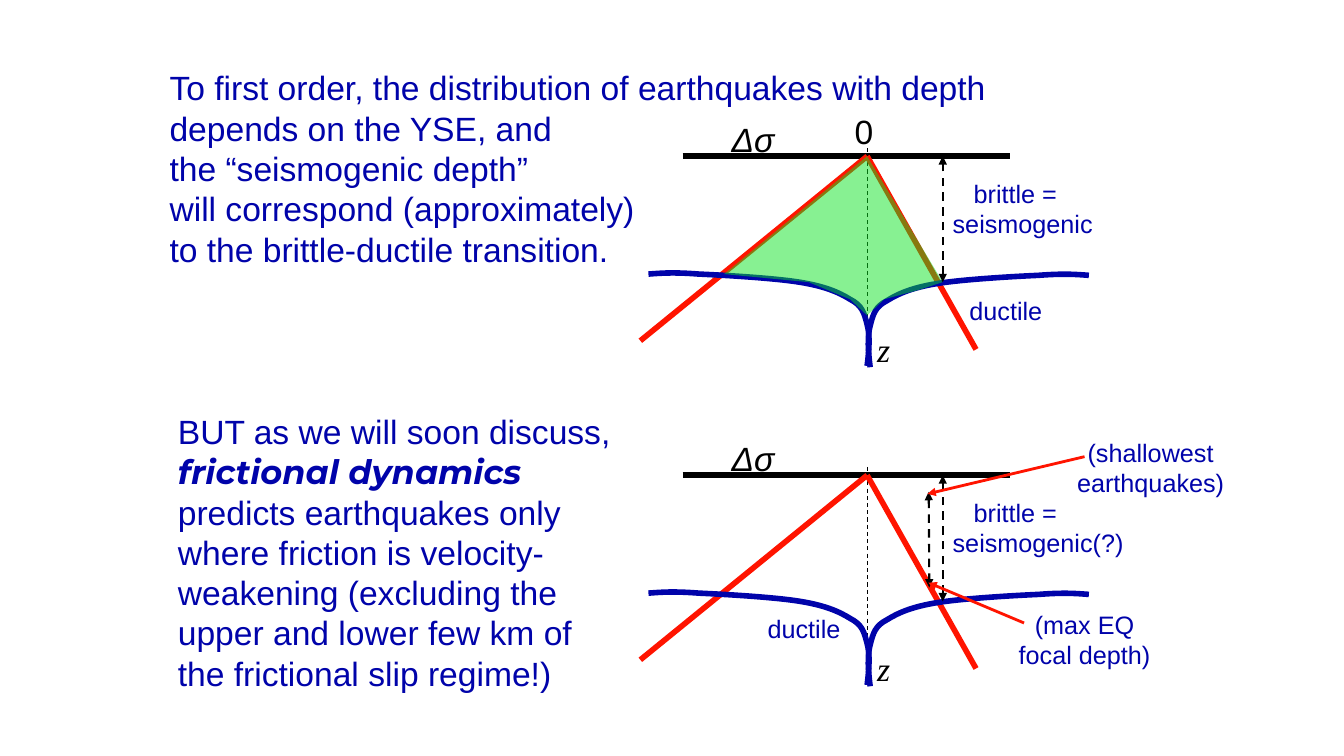
from dataclasses import dataclass

from lxml.etree import SubElement
from pptx import Presentation
from pptx.dml.color import RGBColor
from pptx.enum.dml import MSO_LINE
from pptx.enum.shapes import MSO_CONNECTOR
from pptx.enum.text import MSO_AUTO_SIZE, PP_ALIGN
from pptx.oxml.ns import qn
from pptx.shapes.autoshape import Shape
from pptx.slide import Slide
from pptx.util import Pt

BLACK = RGBColor(0x00, 0x00, 0x00)
RED = RGBColor(0xFF, 0x14, 0x00)
BLUE = RGBColor(0x00, 0x03, 0xAA)
GREEN = RGBColor(0x0C, 0xE3, 0x21)

Point = tuple[float, float]

APEX_X = 619.4
UPPER_APEX_Y = 111.6
LOWER_APEX_Y = 339.5
DUCTILE_CURVE: list[Point] = [
    (0, 149.8),
    (1.4, 139), (2.2, 128.2), (0, 120.2),
    (-2.2, 111.6), (-3.6, 106.6), (-12.2, 102.2),
    (-20.2, 97.2), (-30.2, 92.9), (-48.2, 90),
    (-66.2, 87.1), (-102.2, 85), (-120.2, 84.2),
    (-138.2, 82.8), (-146.9, 83.5), (-156.2, 84.2),
]
SEISMOGENIC_ZONE: list[Point] = [
    (0, 0), (-102.2, 84.2), (-41.8, 90), (-12.2, 102.2), (0, 113.8), (0, 120.2),
    (0, 113.8), (12.2, 102.2), (36, 95.8), (54, 90), (0, 0),
]


@dataclass
class Line:
    start: Point
    end: Point
    color: RGBColor
    width: float
    dashed: bool = False
    arrows: tuple[str, ...] = ()


@dataclass
class Label:
    left: float
    top: float
    width: float
    height: float
    text: str
    size: float = 18
    color: RGBColor = BLUE
    font: str = "Arial"
    italic: bool = False
    alignment: PP_ALIGN = PP_ALIGN.LEFT
    first_indent: float = 0
    emphasis: str = ""


DEPTH_ARROWS = ("a:headEnd", "a:tailEnd")
POINTER_ARROW = ("a:tailEnd",)


def add_line(slide: Slide, line: Line, top: float = 0, left: float = 0) -> None:
    connector = slide.shapes.add_connector(
        MSO_CONNECTOR.STRAIGHT,
        Pt(left + line.start[0]), Pt(top + line.start[1]),
        Pt(left + line.end[0]), Pt(top + line.end[1]),
    )
    connector.line.color.rgb = line.color
    connector.line.width = Pt(line.width)
    if line.dashed:
        connector.line.dash_style = MSO_LINE.DASH
    properties = connector._element.spPr
    for arrow in line.arrows:
        SubElement(properties.find(qn("a:ln")), qn(arrow), type="triangle")
    SubElement(properties, qn("a:effectLst"))


def add_label(slide: Slide, label: Label) -> None:
    shape = slide.shapes.add_textbox(
        Pt(label.left), Pt(label.top), Pt(label.width), Pt(label.height)
    )
    text_frame = shape.text_frame
    text_frame.text = label.text
    text_frame.word_wrap = False
    text_frame.auto_size = MSO_AUTO_SIZE.SHAPE_TO_FIT_TEXT
    for paragraph in text_frame.paragraphs:
        emphasized = paragraph.text == label.emphasis
        paragraph.alignment = label.alignment
        for run in paragraph.runs:
            run.font.name = "Montserrat" if emphasized else label.font
            run.font.size = Pt(label.size)
            run.font.color.rgb = label.color
            run.font.bold = emphasized
            run.font.italic = label.italic or emphasized
    if label.first_indent:
        first_properties = text_frame.paragraphs[0]._p.get_or_add_pPr()
        first_properties.set("marL", str(Pt(label.first_indent)))


def add_outline(slide: Slide, points: list[Point], apex_y: float, close: bool) -> Shape:
    placed = [(Pt(APEX_X + x), Pt(apex_y + y)) for x, y in points]
    builder = slide.shapes.build_freeform(*placed[0])
    builder.add_line_segments(placed[1:], close=close)
    shape = builder.convert_to_shape()
    shape.shadow.inherit = False
    return shape


def bend_segments(shape: Shape) -> None:
    segments = list(shape._element.iter(qn("a:lnTo")))
    outline = segments[0].getparent()
    for first in range(0, len(segments), 3):
        curve = SubElement(outline, qn("a:cubicBezTo"))
        for segment in segments[first:first + 3]:
            curve.append(segment[0])
            outline.remove(segment)


def add_ductile_curves(slide: Slide, apex_y: float) -> None:
    mirrored = [(2.2 - x, y + 0.9) for x, y in DUCTILE_CURVE]
    for points in (DUCTILE_CURVE, mirrored):
        shape = add_outline(slide, points, apex_y, close=False)
        bend_segments(shape)
        shape.fill.background()
        shape.line.color.rgb = BLUE
        shape.line.width = Pt(4)


def add_seismogenic_zone(slide: Slide, apex_y: float) -> None:
    shape = add_outline(slide, SEISMOGENIC_ZONE, apex_y, close=True)
    shape.fill.solid()
    shape.fill.fore_color.rgb = GREEN
    shape.line.fill.background()
    color = shape._element.spPr.find(qn("a:solidFill"))[0]
    SubElement(color, qn("a:alpha"), val="49000")


def add_strength_envelope(slide: Slide, apex_y: float, shaded: bool) -> None:
    for line in (
        Line((-131.8, 0), (102.2, 0), BLACK, 4),
        Line((0, -6), (0, 144), BLACK, 0.75, dashed=True),
        Line((0, 0), (77.8, 138), RED, 4),
        Line((0, 0), (-162, 131.8), RED, 4),
    ):
        add_line(slide, line, apex_y, APEX_X)
    add_ductile_curves(slide, apex_y)
    if shaded:
        add_seismogenic_zone(slide, apex_y)
    add_line(slide, Line((54, 90), (54, 0), BLACK, 1.5, True, DEPTH_ARROWS), apex_y, APEX_X)
    add_label(slide, Label(515.5, apex_y - 30.2, 49.7, 36, "Δσ", 24, BLACK, italic=True))
    add_label(slide, Label(APEX_X, apex_y + 120, 23.8, 36, "z", 24, BLACK, "Times New Roman", True))


def main() -> None:
    presentation = Presentation()
    presentation.slide_width = Pt(960)
    presentation.slide_height = Pt(540)
    slide = presentation.slides.add_slide(presentation.slide_layouts[6])

    add_strength_envelope(slide, UPPER_APEX_Y, shaded=True)
    add_strength_envelope(slide, LOWER_APEX_Y, shaded=False)

    for line in (
        Line((663.4, 351.4), (663.8, 419.6), BLACK, 1.5, True, DEPTH_ARROWS),
        Line((731.5, 445), (663.1, 416.2), RED, 2, arrows=POINTER_ARROW),
        Line((774.7, 326.2), (662.4, 352.8), RED, 2, arrows=POINTER_ARROW),
    ):
        add_line(slide, line)

    opening = (
        "To first order, the distribution of earthquakes with depth\n"
        "depends on the YSE, and\nthe “seismogenic depth”\n"
        "will correspond (approximately)\nto the brittle-ductile transition."
    )
    caveat = (
        "BUT as we will soon discuss,\nfrictional dynamics\n"
        "predicts earthquakes only\nwhere friction is velocity-\n"
        "weakening (excluding the\nupper and lower few km of\n"
        "the frictional slip regime!)"
    )
    for label in (
        Label(114, 44.6, 604.1, 152.6, opening, 24),
        Label(120, 289.9, 326.9, 211, caveat, 24, emphasis="frictional dynamics"),
        Label(603.4, 75.6, 28.1, 36, "0", 24, BLACK),
        Label(673.4, 123.8, 114.5, 50.4, "brittle =\nseismogenic", first_indent=15),
        Label(673.4, 351.6, 137.5, 51.1, "brittle =\nseismogenic(?)", first_indent=15),
        Label(685.4, 207.4, 66.2, 28.8, "ductile"),
        Label(541.2, 434.2, 66.2, 28.8, "ductile"),
        Label(720, 431.8, 109.4, 51.1, "(max EQ\nfocal depth)", alignment=PP_ALIGN.CENTER),
        Label(761.8, 308.5, 120.2, 51.1, "(shallowest\nearthquakes)", alignment=PP_ALIGN.CENTER),
    ):
        add_label(slide, label)

    presentation.save("out.pptx")


if __name__ == "__main__":
    main()
